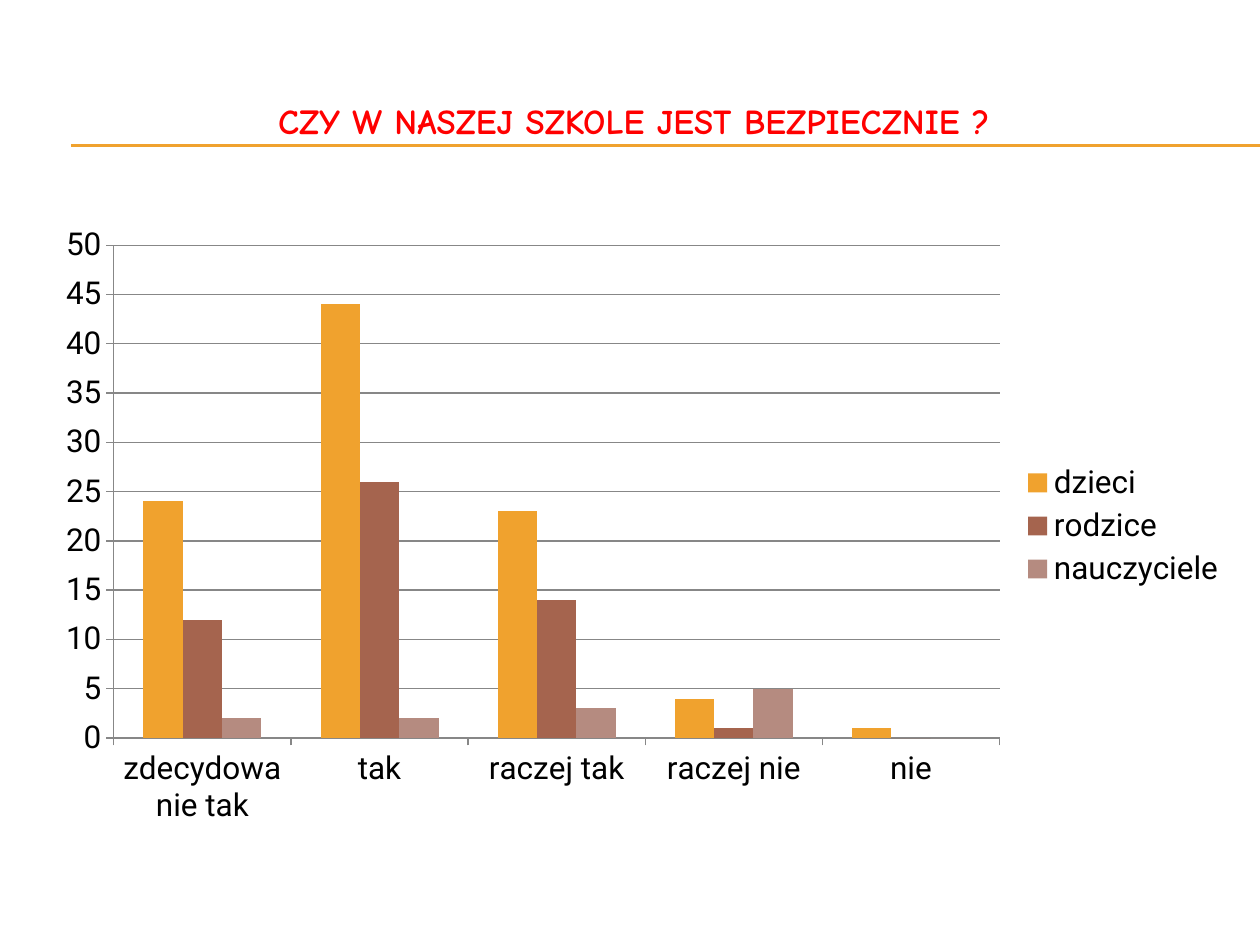
from lxml import etree
from pptx import Presentation
from pptx.chart.data import CategoryChartData
from pptx.dml.color import RGBColor
from pptx.enum.chart import XL_CHART_TYPE, XL_LEGEND_POSITION as LegendPos, XL_TICK_MARK as Tick
from pptx.enum.shapes import MSO_CONNECTOR as Connector
from pptx.enum.text import MSO_ANCHOR as Anchor, PP_ALIGN as Align
from pptx.oxml.ns import qn
from pptx.util import Pt

EMU_PER_PX = 914400 / 126
SLIDE_SIZE = (1260, 945)
COLORS = {
    "title": "FF0000",
    "text": "000000",
    "rule": "F0A22E",
    "grid": "878787",
    "dzieci": "F0A22E",
    "rodzice": "A5644E",
    "nauczyciele": "B58B80",
}
ANSWERS = ["zdecydowanie tak", "tak", "raczej tak", "raczej nie", "nie"]
VOTES = {
    "dzieci": (24, 44, 23, 4, 1),
    "rodzice": (12, 26, 14, 1, 0),
    "nauczyciele": (2, 2, 3, 5, 0),
}
PLOT_LAYOUT = {"x": 0.06, "y": 0.05, "w": 0.74, "h": 0.79}


def px(*lengths):
    return [round(length * EMU_PER_PX) for length in lengths]


def color(name):
    return RGBColor.from_string(COLORS[name])


def style_font(font, family, size, color_name, bold=False):
    font.name, font.size, font.bold = family, Pt(size), bold
    font.color.rgb = color(color_name)


def add_rule(slide, left, right, y):
    rule = slide.shapes.add_connector(Connector.STRAIGHT, *px(left, y, right, y))
    rule.line.color.rgb = color("rule")
    rule.line.width = Pt(0.75)
    etree.SubElement(rule.line._get_or_add_ln().getparent(), qn("a:effectLst"))


def set_title(slide, question):
    title = slide.shapes.title
    title.left, title.top, title.width, title.height = px(42, 63, 1197, 116)
    frame = title.text_frame
    frame.text = question
    frame.vertical_anchor = Anchor.MIDDLE
    heading = frame.paragraphs[0]
    heading.alignment = Align.CENTER
    style_font(heading.runs[0].font, "Comic Neue", 20, "title", bold=True)


def place_plot(chart):
    """Fix the inner plot area as fractions of the chart frame."""
    plot_area = chart._chartSpace.chart.plotArea
    for automatic in plot_area.findall(qn("c:layout")):
        plot_area.remove(automatic)
    layout = etree.Element(qn("c:layout"))
    plot_area.insert(0, layout)
    manual = etree.SubElement(layout, qn("c:manualLayout"))
    settings = {"layoutTarget": "inner", "xMode": "edge", "yMode": "edge", **PLOT_LAYOUT}
    for tag, value in settings.items():
        etree.SubElement(manual, qn(f"c:{tag}")).set("val", str(value))


def style_line(line):
    line.color.rgb = color("grid")
    line.width = Pt(0.75)


def add_votes_chart(slide):
    votes = CategoryChartData(number_format="0")
    votes.categories = ANSWERS
    for group, counts in VOTES.items():
        votes.add_series(group, counts)
    chart = slide.shapes.add_chart(
        XL_CHART_TYPE.COLUMN_CLUSTERED, *px(42, 214, 1197, 624), votes
    ).chart
    style_font(chart.font, "Roboto", 18, "text")
    chart.has_title = False
    chart.has_legend = True
    chart.legend.position = LegendPos.RIGHT
    chart.legend.include_in_layout = False

    columns = chart.plots[0]
    columns.gap_width, columns.overlap = 150, 0
    columns.vary_by_categories = False
    for series in columns.series:
        series.format.fill.solid()
        series.format.fill.fore_color.rgb = color(series.name)

    for axis in (chart.category_axis, chart.value_axis):
        axis.major_tick_mark, axis.minor_tick_mark = Tick.OUTSIDE, Tick.NONE
        style_line(axis.format.line)
    scale = chart.value_axis
    scale.minimum_scale, scale.maximum_scale, scale.major_unit = 0, 50, 5
    scale.has_major_gridlines = True
    style_line(scale.major_gridlines.format.line)
    place_plot(chart)


def main():
    deck = Presentation()
    deck.slide_width, deck.slide_height = px(*SLIDE_SIZE)
    slide = deck.slides.add_slide(deck.slide_layouts.get_by_name("Title Only"))
    for y in (145, 146):
        add_rule(slide, 71, 1260, y)
    set_title(slide, "CZY W NASZEJ SZKOLE JEST BEZPIECZNIE ? ")
    add_votes_chart(slide)
    deck.save("out.pptx")


if __name__ == "__main__":
    main()
